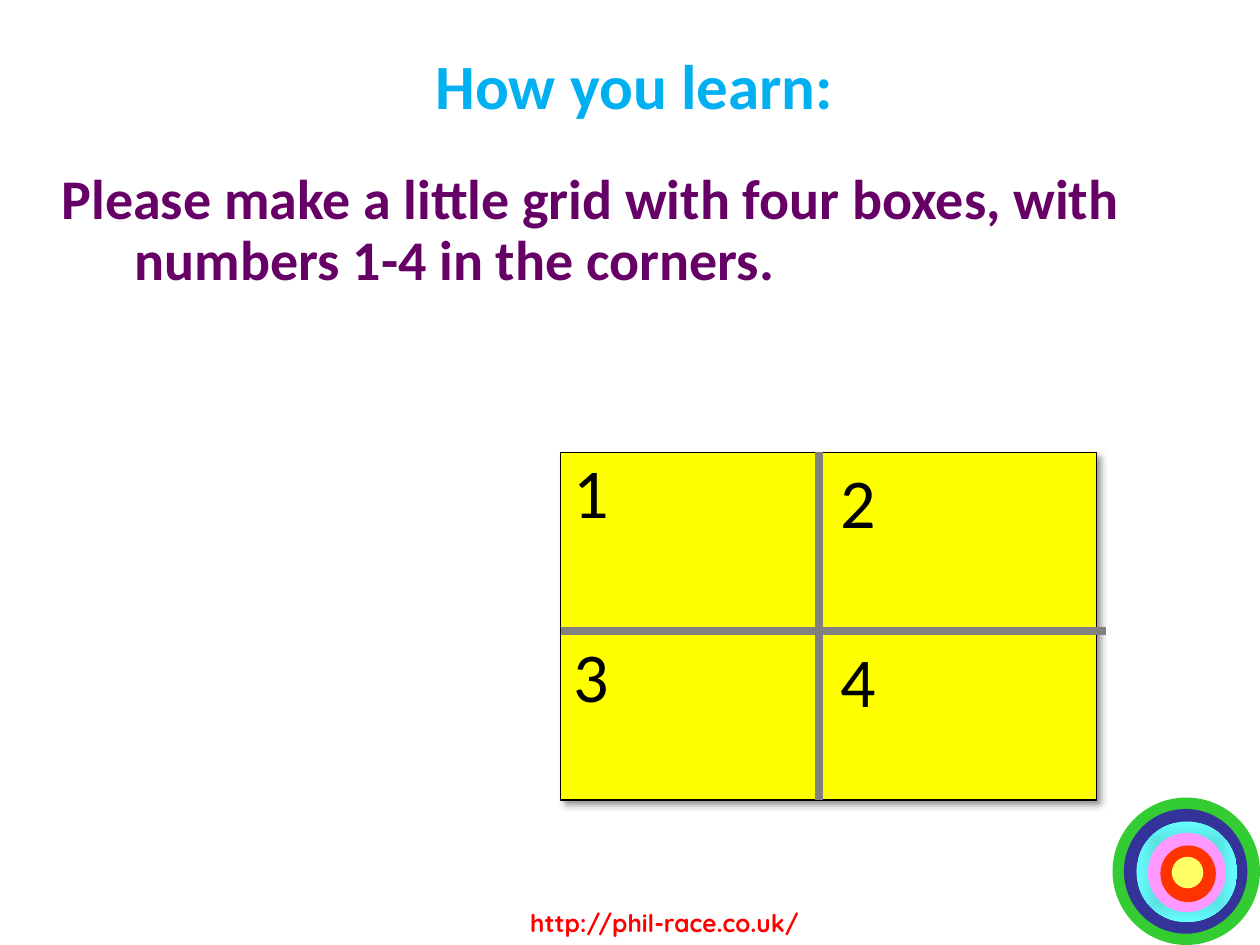
from lxml import etree
from pptx import Presentation
from pptx.dml.color import RGBColor
from pptx.enum.shapes import MSO_CONNECTOR as Connector, MSO_SHAPE as Preset
from pptx.enum.text import MSO_ANCHOR as Anchor, MSO_AUTO_SIZE as AutoSize, PP_ALIGN as Align
from pptx.oxml import parse_xml
from pptx.oxml.ns import nsdecls, qn
from pptx.util import Emu, Pt

PX = 9144  # 100 px to the inch

BLACK = RGBColor(0x00, 0x00, 0x00)
GREY = RGBColor(0x80, 0x80, 0x80)
YELLOW = RGBColor(0xFF, 0xFF, 0x00)
RED = RGBColor(0xFF, 0x00, 0x00)
SKY = RGBColor(0x00, 0xB0, 0xF0)
PURPLE = RGBColor(0x66, 0x00, 0x66)
RING_GREEN = RGBColor(0x33, 0xCC, 0x33)
RING_NAVY = RGBColor(0x33, 0x33, 0x99)
RING_TEAL = RGBColor(0x47, 0xB2, 0xB2)
RING_CYAN = RGBColor(0x66, 0xFF, 0xFF)
RING_PINK = RGBColor(0xFF, 0x99, 0xFF)
RING_ORANGE = RGBColor(0xFF, 0x33, 0x00)
RING_LEMON = RGBColor(0xFF, 0xFF, 0x66)


def px(*lengths):
    return [Emu(length * PX) for length in lengths]


def add_text(slide, box, text, *, size, color, font="Calibri", bold=False, align=Align.LEFT,
             anchor=Anchor.TOP, spacing=None, hanging=0, wrap=True, grow=False):
    shape = slide.shapes.add_textbox(*px(*box))
    frame = shape.text_frame
    frame.word_wrap = wrap
    frame.vertical_anchor = anchor
    frame.auto_size = AutoSize.SHAPE_TO_FIT_TEXT if grow else AutoSize.NONE
    paragraph = frame.paragraphs[0]
    paragraph.alignment = align
    if spacing:
        paragraph.line_spacing = spacing
    if hanging:
        properties = paragraph._p.get_or_add_pPr()
        properties.set("marL", str(hanging * PX))
        properties.set("indent", str(-hanging * PX))
    run = paragraph.add_run()
    run.text = text
    run.font.name = font
    run.font.size = Pt(size)
    run.font.bold = bold
    run.font.color.rgb = color
    return shape


def add_solid(slide, preset, box, color):
    shape = slide.shapes.add_shape(preset, *px(*box))
    shape.shadow.inherit = False
    shape.fill.solid()
    shape.fill.fore_color.rgb = color
    shape.line.fill.background()
    return shape


def add_divider(slide, start, end):
    line = slide.shapes.add_connector(Connector.STRAIGHT, *px(*start, *end))
    line.line.color.rgb = GREY
    line.line.width = Pt(4.5)
    etree.SubElement(line._element.spPr, qn("a:effectLst"))


def set_radial_gradient(shape, inner, outer):
    solid = shape._element.spPr.find(qn("a:solidFill"))
    gradient = parse_xml(
        f'<a:gradFill {nsdecls("a")} rotWithShape="1"><a:gsLst>'
        f'<a:gs pos="0"><a:srgbClr val="{inner}"/></a:gs>'
        f'<a:gs pos="100000"><a:srgbClr val="{outer}"/></a:gs></a:gsLst>'
        '<a:path path="shape"><a:fillToRect l="50000" t="50000" r="50000" b="50000"/></a:path>'
        '</a:gradFill>')
    solid.getparent().replace(solid, gradient)


def set_soft_shadow(shape):
    effects = shape._element.spPr.find(qn("a:effectLst"))
    effects.append(parse_xml(
        f'<a:outerShdw {nsdecls("a")} blurRad="{Pt(4)}" dist="{Pt(3)}" dir="2700000" '
        'algn="tl" rotWithShape="0">'
        f'<a:srgbClr val="{BLACK}"><a:alpha val="40000"/></a:srgbClr></a:outerShdw>'))


def add_target(slide, left, top):
    """Concentric rings, largest first, each given as offset, width, height and colour."""
    rings = [
        (0, 117, 117, RING_GREEN),
        (9, 98, 99, RING_NAVY),
        (19, 80, 80, RING_CYAN),
        (28, 62, 63, RING_PINK),
        (38, 44, 45, RING_ORANGE),
        (47, 25, 25, RING_LEMON),
    ]
    for offset, width, height, color in rings:
        ring = add_solid(slide, Preset.OVAL, (left + offset, top + offset, width, height), color)
        if color == RING_CYAN:
            set_radial_gradient(ring, RING_TEAL, RING_CYAN)


def add_number_grid(slide, left, top, width, height):
    """Four numbered boxes divided by two thick lines."""
    panel = add_solid(slide, Preset.RECTANGLE, (left, top, width, height), YELLOW)
    panel.line.color.rgb = BLACK
    panel.line.width = Pt(0.75)
    set_soft_shadow(panel)

    middle_x, middle_y = left + 205, top + 142
    add_divider(slide, (middle_x, top), (middle_x, top + height))
    add_divider(slide, (left, middle_y), (left + width + 8, middle_y))

    right = middle_x + 7
    numbers = [
        ("1", left, top - 8, 63, True),
        ("2", right, top, 48, False),
        ("3", left, middle_y - 4, 101, True),
        ("4", right, middle_y, 48, False),
    ]
    for number, x, y, box_width, wrap in numbers:
        add_text(slide, (x, y, box_width, 78), number, size=40, color=BLACK, wrap=wrap, grow=True)


def main():
    presentation = Presentation()
    presentation.slide_width, presentation.slide_height = px(1000, 750)
    slide = presentation.slides.add_slide(presentation.slide_layouts[6])

    add_target(slide, 883, 633)
    add_text(slide, (383, 716, 289, 34), "http://phil-race.co.uk/", size=14, color=RED,
             font="Quicksand", bold=True, align=Align.CENTER, grow=True)
    add_text(slide, (27, 21, 953, 102), "How you learn:", size=36, color=SKY, bold=True,
             align=Align.CENTER, anchor=Anchor.MIDDLE, spacing=0.85)
    add_text(slide, (39, 131, 941, 511),
             "Please make a little grid with four boxes, with numbers 1-4 in the corners.",
             size=32, color=PURPLE, bold=True, spacing=0.9, hanging=58)
    add_number_grid(slide, 445, 359, 425, 276)

    presentation.save("out.pptx")


if __name__ == "__main__":
    main()
